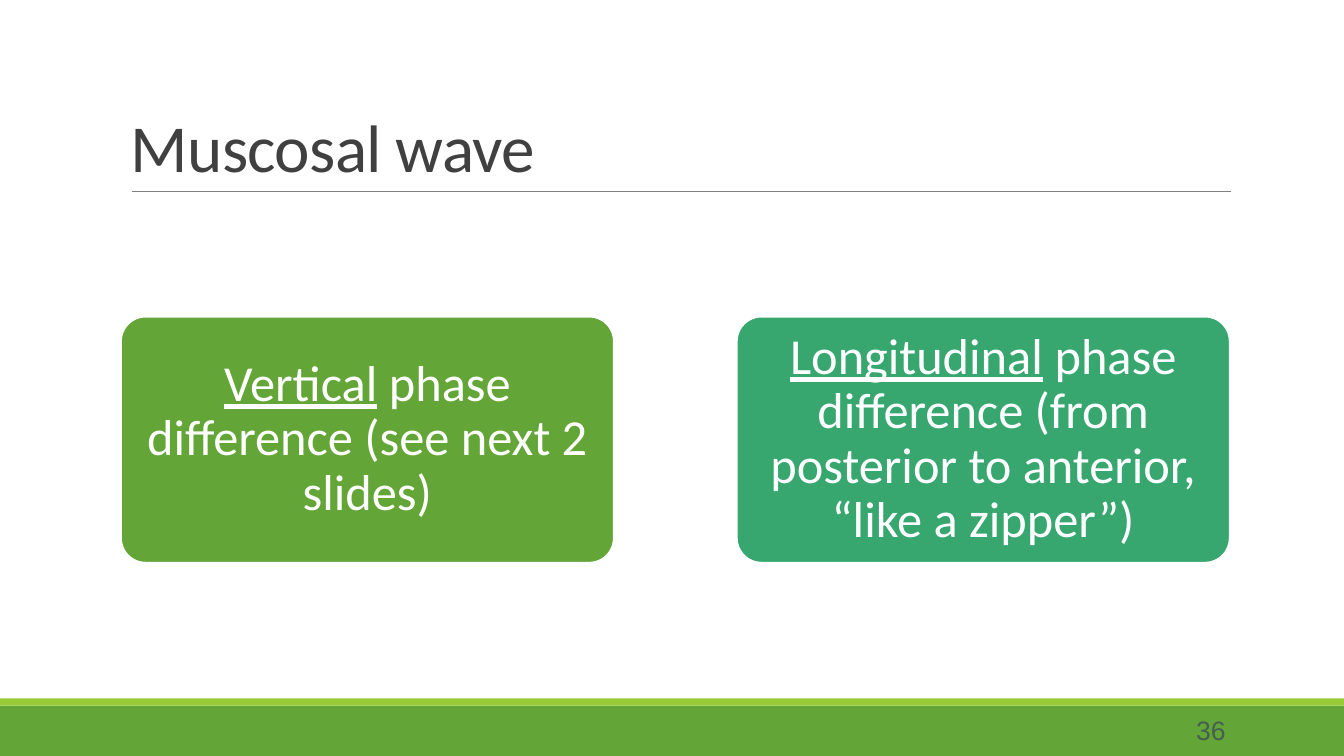
import pptx
import pptx.dml.color
import pptx.enum.shapes
import pptx.enum.text
import pptx.oxml
import pptx.oxml.ns
import pptx.util
from pptx.util import Cm

ALIGN = pptx.enum.text.PP_ALIGN
ANCHOR = pptx.enum.text.MSO_ANCHOR
SHAPE = pptx.enum.shapes.MSO_SHAPE
SLIDE_WIDTH, SLIDE_HEIGHT = 33.87, 19.05


def colour(hex_string):
    """Turn a hex string into a colour."""
    return pptx.dml.color.RGBColor.from_string(hex_string)


def write(frame, runs, font="Calibri", size=36, color="FFFFFF", align=ALIGN.LEFT,
          anchor=ANCHOR.MIDDLE, line_spacing=0.9, tracking=None, insets=(0.25, 0.13)):
    """Fill a text frame with one paragraph of (text, underlined) runs."""
    frame.word_wrap = True
    frame.vertical_anchor = anchor
    frame.margin_left = frame.margin_right = Cm(insets[0])
    frame.margin_top = frame.margin_bottom = Cm(insets[1])
    paragraph = frame.paragraphs[0]
    paragraph.alignment = align
    paragraph.line_spacing = line_spacing
    for text, underlined in runs:
        run = paragraph.add_run()
        run.text = text
        run.font.name = font
        run.font.size = pptx.util.Pt(size)
        run.font.color.rgb = colour(color)
        run.font.underline = underlined
        if tracking is not None:
            run.font._element.set("spc", str(int(tracking * 100)))


def add_label(slide, left, top, width, height, text, **text_format):
    """Add a text box with one plain run."""
    label = slide.shapes.add_textbox(Cm(left), Cm(top), Cm(width), Cm(height))
    write(label.text_frame, [(text, False)], **text_format)


def add_block(slide, kind, left, top, width, height, fill):
    """Add a filled shape without outline or shadow."""
    block = slide.shapes.add_shape(kind, Cm(left), Cm(top), Cm(width), Cm(height))
    block.shadow.inherit = False
    block.fill.solid()
    block.fill.fore_color.rgb = colour(fill)
    block.line.fill.background()
    return block


def add_card(slide, left, fill, key_word, rest):
    """Add a rounded card whose key word is underlined."""
    card = add_block(slide, SHAPE.ROUNDED_RECTANGLE, left, 7.98, 12.42, 6.2, fill)
    card.adjustments[0] = 0.1
    card.line.color.rgb = colour("FFFFFF")
    card.line.width = pptx.util.Pt(1.25)
    write(card.text_frame, [(key_word, True), (rest, False)],
          align=ALIGN.CENTER, insets=(0.18, 0.13))


def add_rule(slide, left, right, y):
    """Add the thin grey rule under the title."""
    rule = slide.shapes.add_connector(
        pptx.enum.shapes.MSO_CONNECTOR.STRAIGHT, Cm(left), Cm(y), Cm(right), Cm(y))
    rule.line.color.rgb = colour("808080")
    rule.line.width = pptx.util.Pt(0.5)
    rule._element.spPr.append(pptx.oxml.parse_xml(
        f'<a:effectLst {pptx.oxml.ns.nsdecls("a")}/>'))


def main():
    """Build the slide and save it."""
    deck = pptx.Presentation()
    deck.slide_width, deck.slide_height = Cm(SLIDE_WIDTH), Cm(SLIDE_HEIGHT)
    slide = deck.slides.add_slide(deck.slide_layouts[6])

    add_block(slide, SHAPE.RECTANGLE, 0, 17.78, SLIDE_WIDTH, 1.27, "63A537")
    add_block(slide, SHAPE.RECTANGLE, 0, 17.6, SLIDE_WIDTH, 0.18, "99CB38")
    add_rule(slide, 3.33, 31.01, 4.83)
    add_label(slide, 3.05, 0.79, 27.94, 4.04, "Muscosal wave", size=48, color="404040",
              anchor=ANCHOR.BOTTOM, line_spacing=0.85, tracking=-0.5)
    add_label(slide, 27.51, 17.93, 3.63, 1.02, "36", font="Arial", size=19,
              color="455F51", align=ALIGN.RIGHT)
    add_card(slide, 3.05, "63A537", "Vertical", " phase difference (see next 2 slides)")
    add_card(slide, 18.57, "37A76F", "Longitudinal",
             " phase difference (from posterior to anterior, “like a zipper”)")

    deck.save("out.pptx")


if __name__ == "__main__":
    main()
